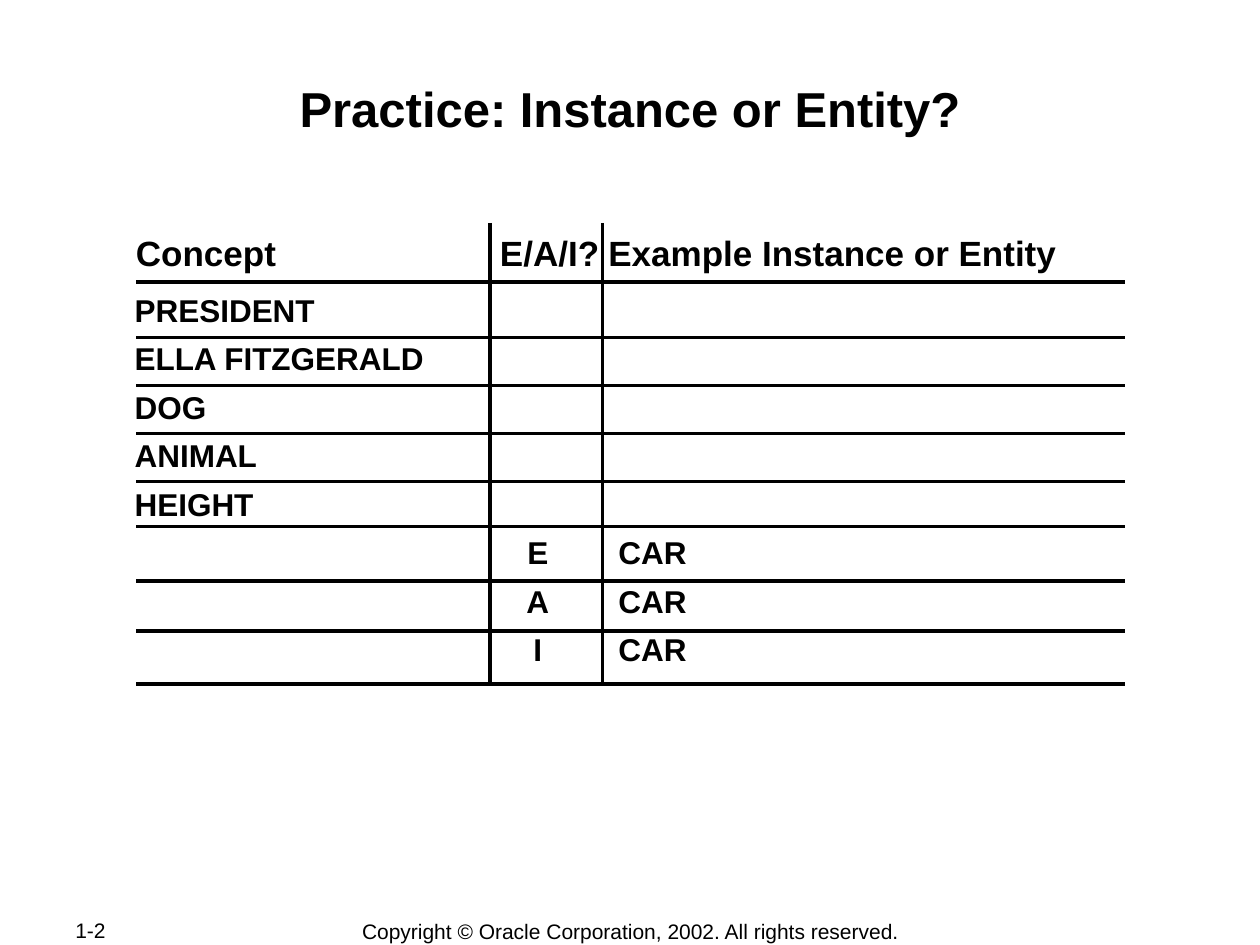
from lxml.etree import SubElement as Sub
from pptx import Presentation
from pptx.dml.color import RGBColor
from pptx.enum.shapes import MSO_CONNECTOR as Link
from pptx.enum.text import MSO_ANCHOR as Anchor, PP_ALIGN as Align
from pptx.oxml.ns import qn
from pptx.util import Inches, Pt

WIDE, HIGH = Inches(10), Inches(7.5)
BLACK = RGBColor(0, 0, 0)
WHITE = RGBColor(255, 255, 255)

# Shares of the slide in percent
LEFT, RIGHT = 10.8, 89.3
TOP, BASE = 23.6, 72.4
COLS = [38.9, 47.8]
ROWS = [29.87, 35.73, 40.8, 45.87, 50.93, 55.73, 61.47, 66.8, BASE]

HEADS = ["Concept\tE/A/I?\tExample Instance or Entity"]
TERMS = ["PRESIDENT", "ELLA FITZGERALD", "DOG", "ANIMAL", "HEIGHT",
         "\tE\tCAR", "\tA\tCAR", "\tI\tCAR"]


def across(share):
    return round(WIDE * share / 100)


def down(share):
    return round(HIGH * share / 100)


def add_tabs(para, tabs):
    """Add tab stops given as (share of width, alignment)."""
    stops = Sub(para._p.get_or_add_pPr(), qn("a:tabLst"))
    for share, algn in tabs:
        Sub(stops, qn("a:tab"), pos=str(across(share)), algn=algn)


def add_text(slide, area, lines, size, bold=True, align=Align.LEFT,
             tabs=(), gap=0, pitch=1.0, **frame):
    x, y, w, h = area
    box = slide.shapes.add_textbox(across(x), down(y), across(w), down(h))
    body = box.text_frame
    for key, value in ({"word_wrap": True} | frame).items():
        setattr(body, key, value)
    for num, line in enumerate(lines):
        para = body.add_paragraph() if num else body.paragraphs[0]
        para.text = line
        look = {"alignment": align, "line_spacing": pitch,
                "space_before": Pt(gap if num else 0)}
        for key, value in look.items():
            setattr(para, key, value)
        if tabs:
            add_tabs(para, tabs)
        font = {"name": "Arial", "size": Pt(size), "bold": bold}
        for key, value in font.items():
            setattr(para.font, key, value)
        para.font.color.rgb = BLACK


def add_rule(slide, x1, y1, x2, y2):
    rule = slide.shapes.add_connector(
        Link.STRAIGHT, across(x1), down(y1), across(x2), down(y2))
    rule.line.color.rgb = BLACK
    rule.line.width = Pt(2)
    Sub(rule._element.spPr, qn("a:effectLst"))


def add_grid(slide):
    for x in COLS:
        add_rule(slide, x, TOP, x, BASE)
    for y in ROWS:
        add_rule(slide, LEFT, y, RIGHT, y)


def add_foot(slide):
    look = {"bold": False, "vertical_anchor": Anchor.MIDDLE,
            "margin_top": 0, "margin_bottom": 0}
    add_text(slide, (5, 97.1, 10.6, 2.7), ["1-2"], 12, **look)
    add_text(slide, (27.6, 97.1, 44.9, 2.8),
             ["Copyright © Oracle Corporation, 2002. All rights reserved."],
             12, align=Align.CENTER, word_wrap=False, **look)


def main():
    deck = Presentation()
    deck.slide_width, deck.slide_height = WIDE, HIGH
    slide = deck.slides.add_slide(deck.slide_layouts[6])
    fill = slide.background.fill
    fill.solid()
    fill.fore_color.rgb = WHITE
    add_foot(slide)
    add_text(slide, (10, 8.2, 80, 12.8), ["Practice: Instance or Entity?"],
             28, align=Align.CENTER, margin_top=Inches(0.01))
    add_text(slide, (9.7, 30.4, 48.4, 41.6), TERMS, 18, gap=7.2, pitch=0.95,
             tabs=[(32, "ctr"), (38.4, "l")])
    add_text(slide, (9.8, 24.13, 81, 5.6), HEADS, 20, pitch=0.95,
             tabs=[(28.9, "l"), (37.5, "l")])
    add_grid(slide)
    deck.save("out.pptx")


if __name__ == "__main__":
    main()
